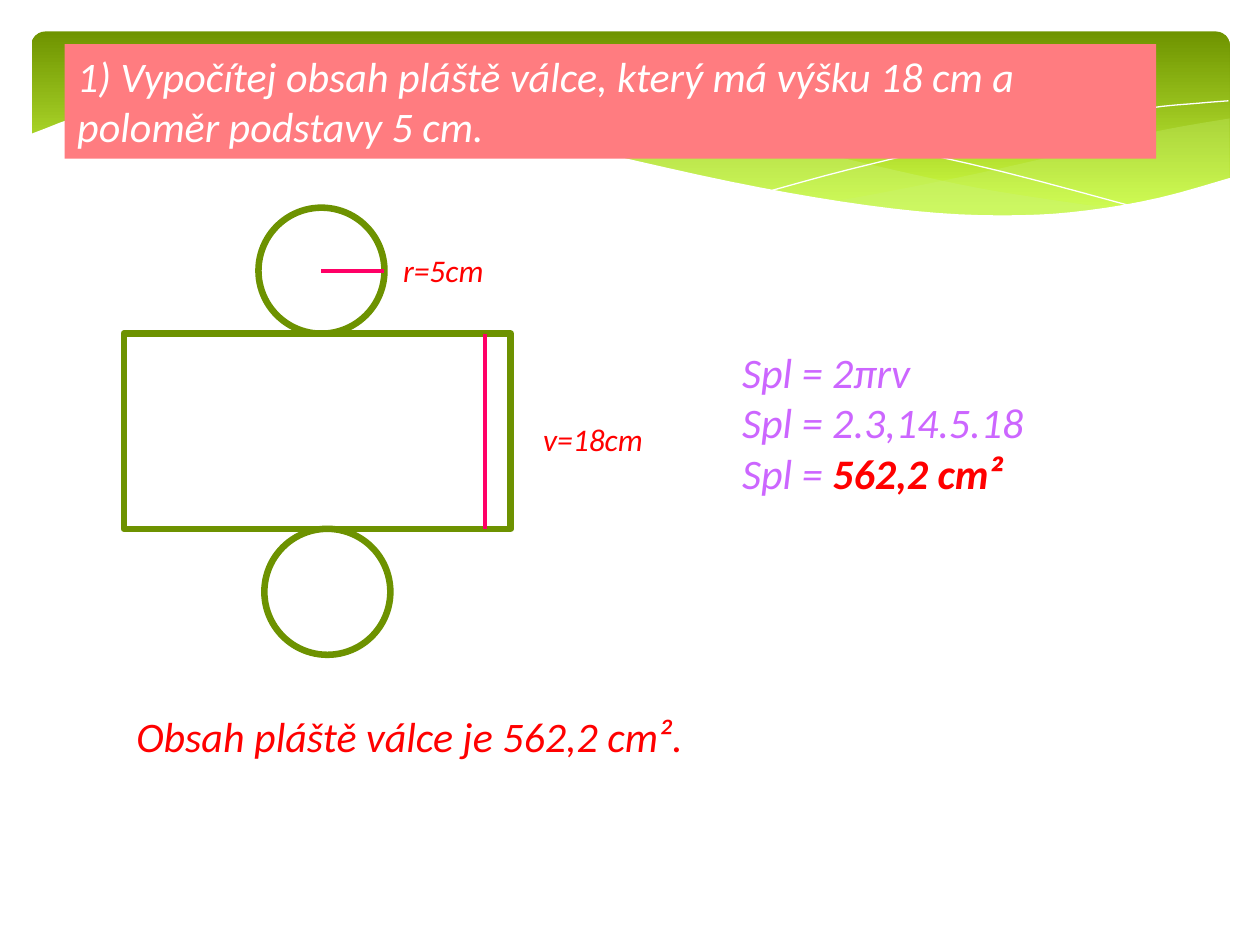
import pptx
import pptx.dml.color
import pptx.enum.shapes
import pptx.enum.text
import pptx.oxml
import pptx.oxml.ns
import pptx.util
from lxml import etree

Pt = pptx.util.Pt
qn = pptx.oxml.ns.qn

COLORS = {
    "white": "FFFFFF", "dark green": "6F9400", "lime": "D0FF44", "pale green": "CAF278",
    "outline": "6D9200", "banner": "FF7C80", "pink": "FF0066", "red": "FF0000", "violet": "CC66FF",
}
RIGHT_WAVE_TOP = [(702.7, 67.7), (673, 72.7), (641.5, 79.2), (620, 85), (561, 98.6), (508, 109.4), (476, 115.2)]
RIGHT_WAVE_BOTTOM = [(476, 115.2), (517.7, 120.2), (553.7, 123), (586, 123.8), (621.4, 122.4),
                     (651.6, 117.4), (678, 111), (702.7, 101.5)]
MIDDLE_WAVE_TOP = [(643, 120.2), (602.6, 114.5), (558, 107.3), (508, 96.5), (453, 83.5), (409.7, 73.4),
                   (370, 66.2), (334.8, 62), (302.4, 59), (273.6, 57.6), (236, 58.3), (206, 62)]
MIDDLE_WAVE_BOTTOM = [(206, 62), (246, 67.7), (291, 76.3), (323.3, 83.5), (381.6, 97.2), (432.7, 108),
                      (478.8, 116), (520, 120.5), (556.6, 123), (589, 124.6), (617, 123.8), (643, 120.2)]
LONG_LINE = [(222.5, 64.8), (241, 61.2), (269.3, 59.4), (299.5, 58.3), (337.7, 59.8), (383.8, 63.4),
             (437.8, 70.6), (500.4, 82), (572.4, 98), (653, 119.5)]
SHORT_LINE = [(441.4, 108.7), (483.8, 97.2), (538.6, 84.2), (602, 71.3), (655, 62), (684.7, 59), (702, 57.6)]
PAPER_EDGE = [(703.4, 101.5), (662.4, 113), (621.4, 120.2), (582.5, 123), (535.7, 121.7), (481, 115.2),
              (417, 103.7), (342, 87), (281.5, 73.4), (227.5, 63.4), (180, 58.3), (139, 56.2), (105, 57),
              (76.3, 60), (54.7, 64), (37.4, 69), (26, 73.4), (16.6, 77)]
PAPER_CORNERS = [(16.6, 161.3), (703.4, 161.3)]


def rgb(color):
    return pptx.dml.color.RGBColor.from_string(COLORS[color])


def smooth(knots, steps=4):
    padded = [knots[0], *knots, knots[-1]]
    points = [knots[0]]
    for a, b, c, d in zip(padded, padded[1:], padded[2:], padded[3:]):
        for step in range(1, steps + 1):
            t = step / steps
            points.append(tuple(
                (2 * q + (r - p) * t + (2 * p - 5 * q + 4 * r - s) * t ** 2
                 + (3 * q - p - 3 * r + s) * t ** 3) / 2
                for p, q, r, s in zip(a, b, c, d)))
    return points


def place(shape, left, top, width, height):
    shape.left, shape.top, shape.width, shape.height = Pt(left), Pt(top), Pt(width), Pt(height)


def paint(shape, fill=None, line=None, line_width=0, opacity=None):
    shape.shadow.inherit = False
    if fill:
        shape.fill.solid()
        shape.fill.fore_color.rgb = rgb(fill)
    else:
        shape.fill.background()
    if opacity:
        color = shape.element.spPr.find(qn("a:solidFill"))[0]
        etree.SubElement(color, qn("a:alpha"), val=str(opacity * 1000))
    if line:
        shape.line.color.rgb = rgb(line)
        shape.line.width = Pt(line_width)
    else:
        shape.line.fill.background()


def add_curve(slide, points, closed=True, **style):
    points = [(Pt(x), Pt(y)) for x, y in points]
    builder = slide.shapes.build_freeform(*points[0])
    builder.add_line_segments(points[1:], close=closed)
    paint(builder.convert_to_shape(), **style)


def add_header(slide):
    shape = slide.shapes.add_shape(
        pptx.enum.shapes.MSO_SHAPE.ROUNDED_RECTANGLE, Pt(18), Pt(18), Pt(684.7), Pt(112.3))
    shape.adjustments[0] = 0.07
    paint(shape)
    shape.fill.gradient()
    shape.fill.gradient_angle = 270
    for stop, color, position in zip(shape.fill.gradient_stops, ("dark green", "lime"), (0, 0.9)):
        stop.color.rgb = rgb(color)
        stop.position = position
    add_curve(slide, smooth(RIGHT_WAVE_TOP) + smooth(RIGHT_WAVE_BOTTOM), fill="pale green", opacity=29)
    add_curve(slide, smooth(MIDDLE_WAVE_TOP) + smooth(MIDDLE_WAVE_BOTTOM), fill="pale green", opacity=40)
    for knots in (LONG_LINE, SHORT_LINE):
        add_curve(slide, smooth(knots), closed=False, line="white")
    add_curve(slide, smooth(PAPER_EDGE) + PAPER_CORNERS, fill="white")


def add_outline(slide, kind, *box):
    shape = slide.shapes.add_shape(kind, *map(Pt, box))
    paint(shape, line="outline", line_width=3.75)


def add_measure(slide, *ends):
    connector = slide.shapes.add_connector(pptx.enum.shapes.MSO_CONNECTOR.STRAIGHT, *map(Pt, ends))
    connector.line.color.rgb = rgb("pink")
    connector.line.width = Pt(2.25)
    etree.SubElement(connector.element.spPr, qn("a:effectLst"))


def format_text(shape, size, color):
    frame = shape.text_frame
    frame.word_wrap = True
    frame.auto_size = pptx.enum.text.MSO_AUTO_SIZE.SHAPE_TO_FIT_TEXT
    frame.vertical_anchor = pptx.enum.text.MSO_ANCHOR.TOP
    for paragraph in frame.paragraphs:
        paragraph.alignment = pptx.enum.text.PP_ALIGN.LEFT
        for run in paragraph.runs:
            run.font.name = "Calibri"
            run.font.size = Pt(size)
            run.font.italic = True
            run.font.color.rgb = rgb(color)


def add_label(slide, text, size, *box):
    shape = slide.shapes.add_textbox(*map(Pt, box))
    shape.text_frame.text = text
    format_text(shape, size, "red")


def fill_title(slide, text):
    title = slide.shapes.title
    title.text_frame.text = text
    place(title, 36.9, 25.2, 623.8, 65.4)
    title.fill.solid()
    title.fill.fore_color.rgb = rgb("banner")
    format_text(title, 24, "white")
    slide.shapes.element.append(title.element)


def fill_calculation(slide, lines, result):
    body = slide.placeholders[1]
    body.text_frame.text = "\n".join(lines)
    result_run = body.text_frame.paragraphs[-1].add_run()
    result_run.text = result
    place(body, 416.9, 194.4, 203.8, 94.5)
    format_text(body, 24, "violet")
    result_run.font.bold = True
    result_run.font.color.rgb = rgb("red")
    for paragraph in body.text_frame.paragraphs:
        paragraph.space_before = Pt(0)
        properties = paragraph._p.get_or_add_pPr()
        properties.set("marL", "0")
        properties.set("indent", "0")
        etree.SubElement(properties, qn("a:buNone"))
    slide.shapes.element.append(body.element)


def main():
    """Build the slide on the lateral surface of a cylinder."""
    presentation = pptx.Presentation()
    presentation.slide_width, presentation.slide_height = Pt(720), Pt(540)
    slide = presentation.slides.add_slide(presentation.slide_layouts[1])
    add_header(slide)
    fill_title(slide, "1) Vypočítej obsah pláště válce, který má výšku 18 cm a poloměr podstavy 5 cm.")
    kinds = pptx.enum.shapes.MSO_SHAPE
    add_outline(slide, kinds.RECTANGLE, 70.8, 190.6, 221.1, 111.6)
    add_outline(slide, kinds.OVAL, 147.7, 118.7, 72, 72)
    add_outline(slide, kinds.OVAL, 151.1, 302.2, 72, 72)
    add_measure(slide, 183.7, 154.7, 219.7, 154.7)
    add_label(slide, "r=5cm", 18, 223.2, 139.9, 108.7, 29.1)
    add_measure(slide, 277.2, 190.6, 277.2, 302.2)
    add_label(slide, "v=18cm", 18, 303.3, 236.3, 113, 29.1)
    fill_calculation(slide, ("Spl = 2πrv", "Spl = 2.3,14.5.18", "Spl = "), "562,2 cm²")
    add_label(slide, "Obsah pláště válce je 562,2 cm².", 24, 70.8, 402.5, 408.2, 36.4)
    presentation.save("out.pptx")


if __name__ == "__main__":
    main()
